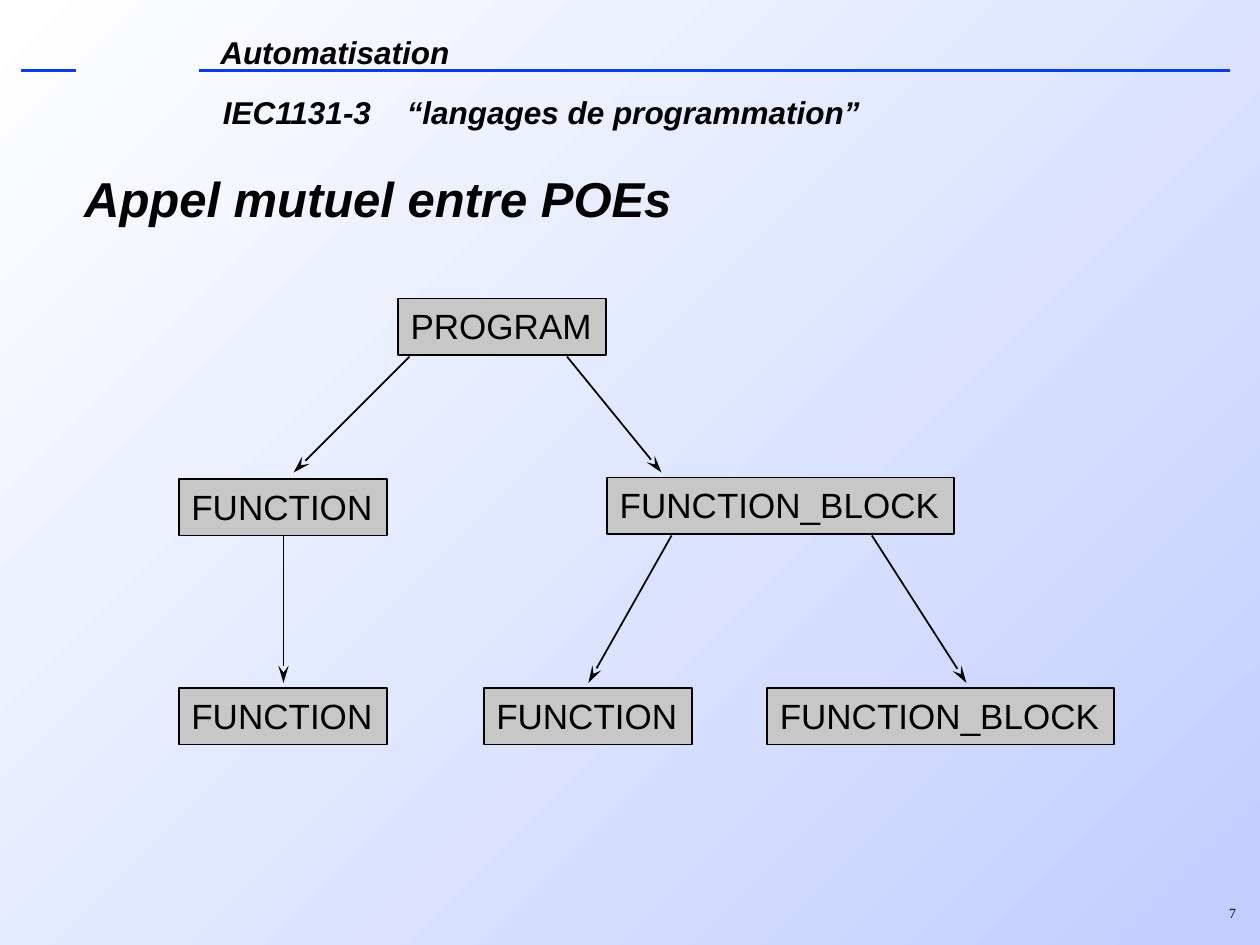
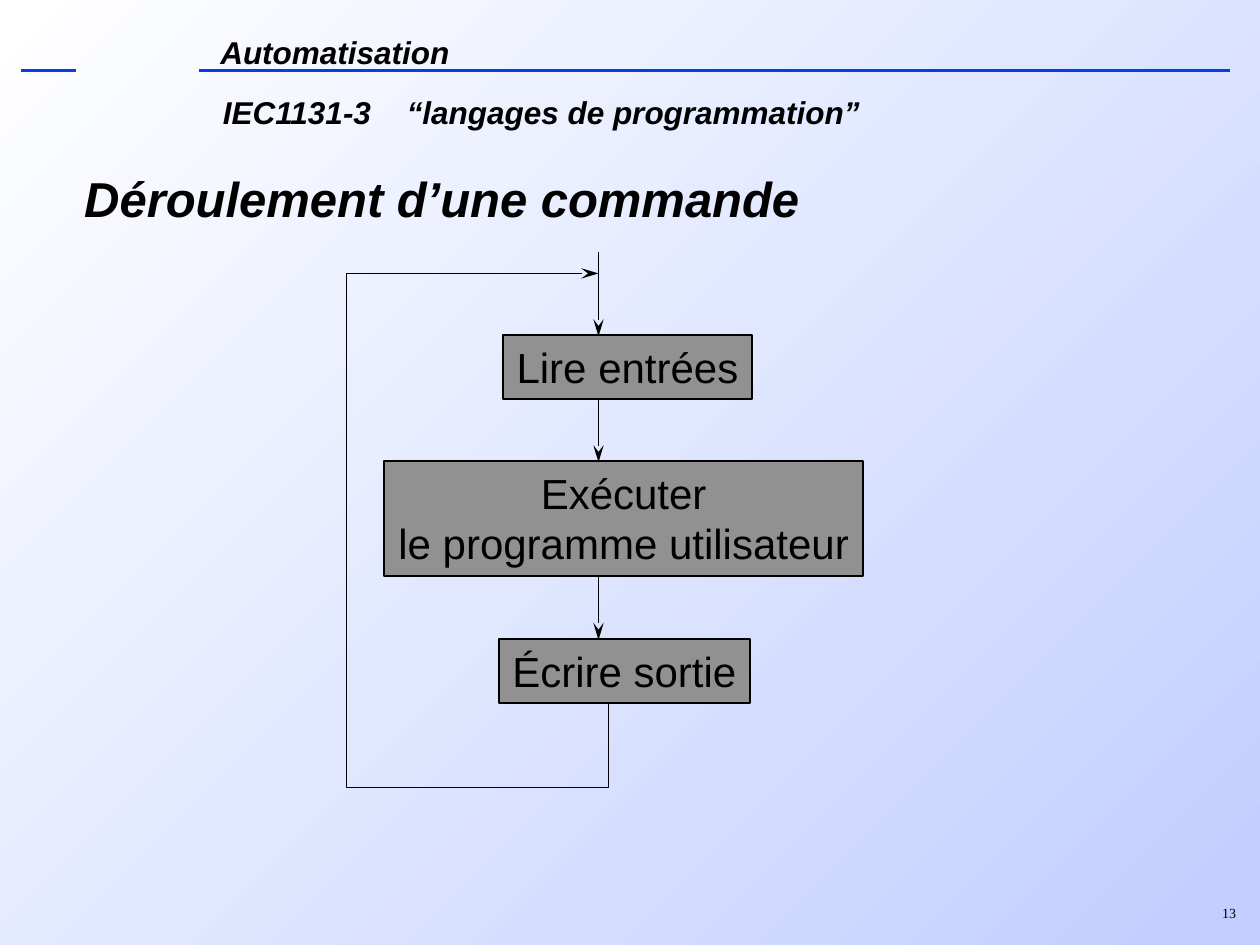
from lxml import etree
from pptx import Presentation
from pptx import util as u
from pptx.dml.color import RGBColor
from pptx.enum import shapes, text
from pptx.oxml.ns import qn

PX = 9144
COLOURS = {
    "ink": "000000",
    "rule": "063DE8",
    "call": "C7C7C7",
    "step": "919191",
    "light": "FFFFFF",
    "sky": "C1CEFF",
}
ALIGN = text.PP_ALIGN
ANCHOR = text.MSO_ANCHOR


def write(slide, words, at, size, font="Arial", colour="ink", strong=False, fill=None,
          align=ALIGN.LEFT, anchor=ANCHOR.TOP, wrap=True, tab=None):
    place = [length * PX for length in at]
    if fill:
        box = slide.shapes.add_shape(shapes.MSO_SHAPE.RECTANGLE, *place)
        box.fill.solid()
        box.fill.fore_color.rgb = RGBColor.from_string(COLOURS[fill])
        stroke(box)
    else:
        box = slide.shapes.add_textbox(*place)
    frame = box.text_frame
    frame.word_wrap = wrap
    frame.vertical_anchor = anchor
    frame.text = words
    for paragraph in frame.paragraphs:
        paragraph.alignment = align
        if tab:
            stops = etree.SubElement(paragraph._p.get_or_add_pPr(), qn("a:tabLst"))
            etree.SubElement(stops, qn("a:tab"), pos=str(tab * PX), algn="l")
        for run in paragraph.runs:
            run.font.name = font
            run.font.size = u.Pt(size)
            run.font.bold = run.font.italic = strong
            run.font.color.rgb = RGBColor.from_string(COLOURS[colour])


def stroke(outline, colour="ink", width=1, arrow=False):
    outline.line.width = u.Pt(width)
    outline.line.color.rgb = RGBColor.from_string(COLOURS[colour])
    properties = outline._element.spPr
    if arrow:
        etree.SubElement(properties.find(qn("a:ln")), qn("a:tailEnd"),
                         type="stealth", w="med", len="lg")
    etree.SubElement(properties, qn("a:effectLst"))


deck = Presentation()
deck.slide_width, deck.slide_height = 1000 * PX, 750 * PX
blank = deck.slide_layouts[6]

backdrop = deck.slide_master.background.fill
backdrop.gradient()
backdrop.gradient_angle = 315
for stop, shade, position in zip(backdrop.gradient_stops, ("light", "sky"), (0, 1)):
    stop.color.rgb = RGBColor.from_string(COLOURS[shade])
    stop.position = position

pages = []
for heading, number in (("Appel mutuel entre POEs", "7"), ("Déroulement d’une commande", "13")):
    page = deck.slides.add_slide(blank)
    write(page, "IEC1131-3\t“langages de programmation”", (167, 60, 641, 58), 18,
          strong=True, anchor=ANCHOR.MIDDLE, tab=146)
    for start, end in ((158, 976), (17, 60)):
        rule = page.shapes.add_connector(
            shapes.MSO_CONNECTOR.STRAIGHT, start * PX, 56 * PX, end * PX, 56 * PX)
        stroke(rule, "rule", 2)
    write(page, "Automatisation", (165, 21, 668, 40), 18, strong=True)
    write(page, number, (958, 708, 33, 33), 8, font="Times New Roman",
          align=ALIGN.RIGHT, anchor=ANCHOR.MIDDLE, wrap=False)
    write(page, heading, (57, 129, 885, 57), 28, strong=True)
    pages.append(page)
calls, cycle = pages

UNIT_WIDTHS = {"PROGRAM": 165, "FUNCTION": 165, "FUNCTION_BLOCK": 275}
for unit, left, top in (
    ("PROGRAM", 316, 237),
    ("FUNCTION", 142, 380),
    ("FUNCTION_BLOCK", 482, 379),
    ("FUNCTION", 142, 546),
    ("FUNCTION", 384, 546),
    ("FUNCTION_BLOCK", 609, 546),
):
    write(calls, unit, (left, top, UNIT_WIDTHS[unit], 45), 20, fill="call", wrap=False)

for step, place in (
    ("Lire entrées", (399, 266, 198, 51)),
    ("Exécuter\nle programme utilisateur", (305, 366, 380, 91)),
    ("Écrire sortie", (396, 507, 199, 51)),
):
    write(cycle, step, place, 24, fill="step", align=ALIGN.CENTER, wrap=False)

call_arrows = (
    (325, 283, 233, 375),
    (225, 425, 225, 542),
    (450, 283, 525, 375),
    (533, 425, 467, 542),
    (692, 425, 767, 542),
)
step_arrows = [(475, top, 475, bottom) for top, bottom in ((200, 267), (317, 367), (458, 508))]
for page, arrows in ((calls, call_arrows), (cycle, step_arrows)):
    for ends in arrows:
        arrow = page.shapes.add_connector(
            shapes.MSO_CONNECTOR.STRAIGHT, *[length * PX for length in ends])
        stroke(arrow, arrow=True)

route = cycle.shapes.build_freeform(483, 558, scale=PX)
route.add_line_segments([(483, 625), (275, 625), (275, 217), (475, 217)], close=False)
loop_back = route.convert_to_shape()
loop_back.fill.background()
stroke(loop_back, arrow=True)

deck.save("out.pptx")
